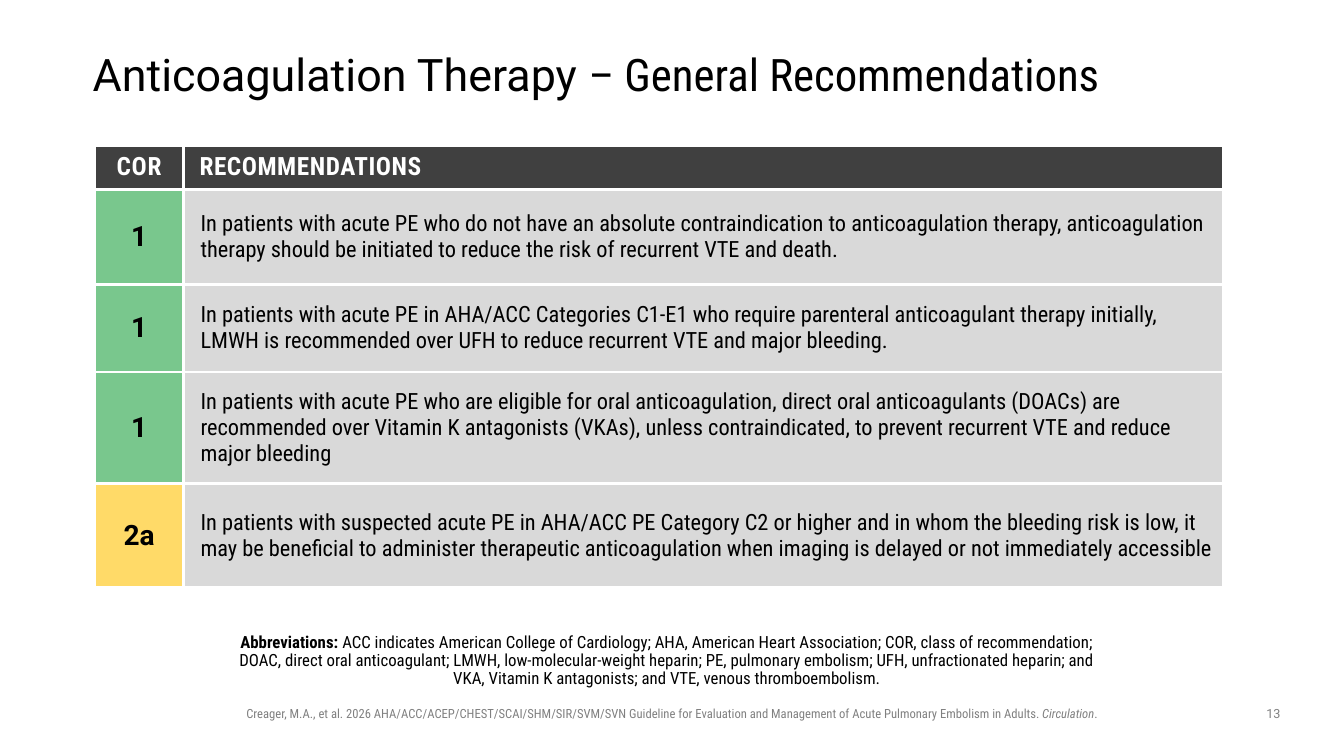
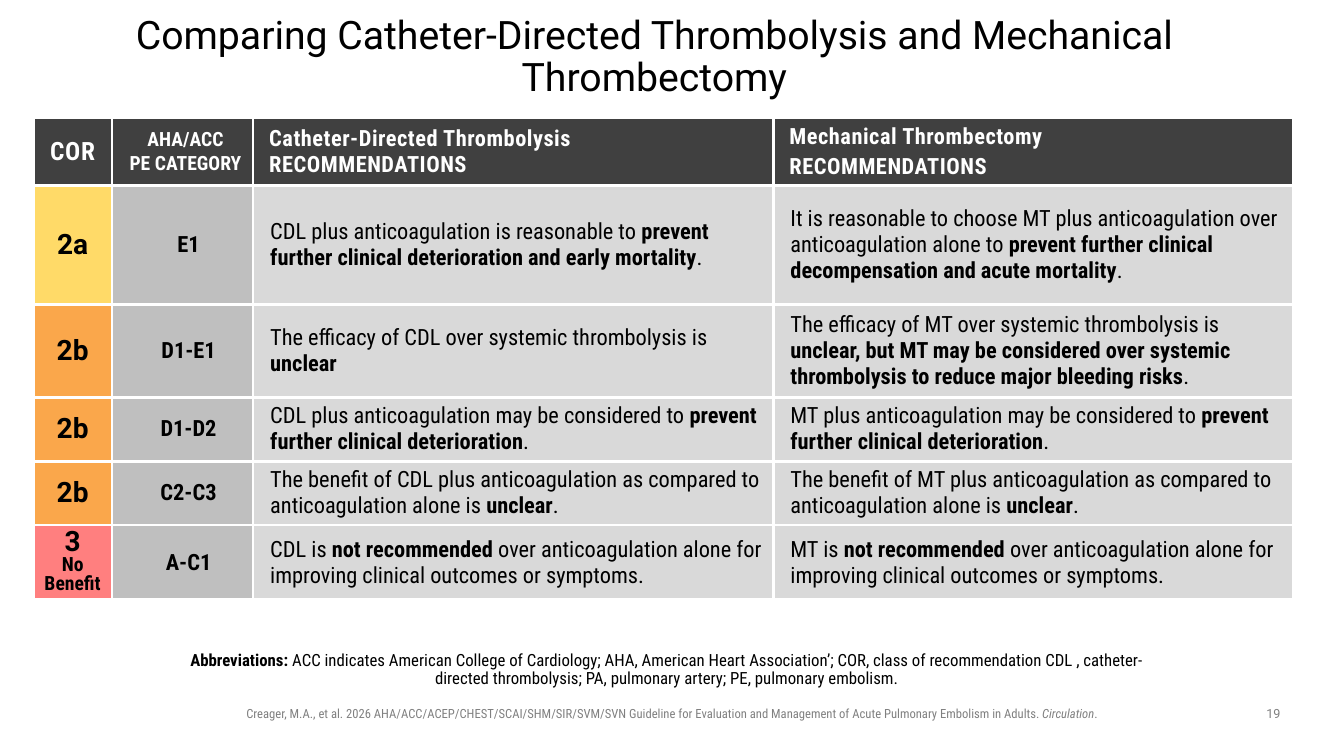
from dataclasses import dataclass

from lxml import etree
from pptx import Presentation
from pptx.dml.color import RGBColor
from pptx.enum.text import MSO_ANCHOR, PP_ALIGN
from pptx.oxml.ns import qn
from pptx.util import Inches, Pt

LEFT, CENTER = PP_ALIGN.LEFT, PP_ALIGN.CENTER
TOP, MIDDLE, BOTTOM = MSO_ANCHOR.TOP, MSO_ANCHOR.MIDDLE, MSO_ANCHOR.BOTTOM

BLACK = RGBColor(0x00, 0x00, 0x00)
WHITE = RGBColor(0xFF, 0xFF, 0xFF)
CHARCOAL = RGBColor(0x40, 0x40, 0x40)
GRAY = RGBColor(0x80, 0x80, 0x80)
SILVER = RGBColor(0xBF, 0xBF, 0xBF)
PALE = RGBColor(0xD9, 0xD9, 0xD9)
GREEN = RGBColor(0x79, 0xC7, 0x8D)
YELLOW = RGBColor(0xFF, 0xDA, 0x68)
ORANGE = RGBColor(0xFA, 0xA7, 0x4B)
RED = RGBColor(0xFF, 0x7F, 0x7F)
CLASS_FILLS = {"1": GREEN, "2a": YELLOW, "2b": ORANGE, "3": RED}

ROBOTO, CONDENSED = "Roboto", "Roboto Condensed"
BOLD = {"bold": True}
SLIDE_WIDTH, SLIDE_HEIGHT = Inches(13.33), Inches(7.5)
BORDER = Pt(2.25)
CELL_MARGIN = 0.05
HEADER_INDENT, BODY_INDENT = 0.06, 0.12

CITATION = (
    "Creager, M.A., et al. 2026 AHA/ACC/ACEP/CHEST/SCAI/SHM/SIR/SVM/SVN Guideline for "
    "Evaluation and Management of Acute Pulmonary Embolism in Adults. *Circulation*."
)


@dataclass
class Box:
    """Position and size as percentages of the slide."""
    left: float
    top: float
    width: float
    height: float

    def lengths(self):
        return (
            round(SLIDE_WIDTH * self.left / 100),
            round(SLIDE_HEIGHT * self.top / 100),
            round(SLIDE_WIDTH * self.width / 100),
            round(SLIDE_HEIGHT * self.height / 100),
        )


CITATION_BOX = Box(16.73, 92.67, 66.54, 3.33)
NUMBER_BOX = Box(93.17, 92.67, 3.15, 3.47)


def add_span(para, text, size, font, color, bold=False, italic=False, tracking=0):
    span = para.add_run()
    span.text = text
    span.font.size = Pt(size)
    span.font.name = font
    span.font.color.rgb = color
    span.font.bold = bold
    span.font.italic = italic
    if tracking:
        span.font._element.set("spc", str(round(tracking * 100)))


def write(frame, text, marked=BOLD, align=LEFT, indent=0, line_spacing=None, gap=0, **style):
    for index, content in enumerate(text.split("\n")):
        para = frame.add_paragraph() if index else frame.paragraphs[0]
        para.alignment = align
        if indent:
            para._p.get_or_add_pPr().set("marL", str(Inches(indent)))
        if line_spacing:
            para.line_spacing = line_spacing
        if index and gap:
            para.space_before = Pt(gap)
        for position, piece in enumerate(content.split("*")):
            piece_style = {**style, **marked} if position % 2 else style
            for number, line in enumerate(piece.split("\v")):
                if number:
                    para.add_line_break()
                if line:
                    add_span(para, line, **piece_style)


def add_text(page, box, text, margins=(0.1, 0.05, 0.1, 0.05), anchor=TOP, **style):
    frame = page.shapes.add_textbox(*box.lengths()).text_frame
    frame.word_wrap = True
    frame.vertical_anchor = anchor
    frame.margin_left, frame.margin_top, frame.margin_right, frame.margin_bottom = map(Inches, margins)
    write(frame, text, **style)


def paint_cell(cell, fill, margin=None):
    properties = cell._tc.get_or_add_tcPr()
    for side in ("lnL", "lnR", "lnT", "lnB"):
        line = etree.SubElement(properties, qn(f"a:{side}"), w=str(BORDER))
        solid = etree.SubElement(line, qn("a:solidFill"))
        etree.SubElement(solid, qn("a:srgbClr"), val=str(WHITE))
    cell.fill.solid()
    cell.fill.fore_color.rgb = fill
    cell.vertical_anchor = MIDDLE
    if margin is not None:
        cell.margin_left = cell.margin_right = Inches(margin)
        cell.margin_top = cell.margin_bottom = Inches(margin)


def fill_header(cell, text, size, align=LEFT, indent=HEADER_INDENT, tracking=0.4):
    paint_cell(cell, CHARCOAL)
    write(cell.text_frame, text, align=align, indent=indent, gap=2.8, size=size,
          font=CONDENSED, color=WHITE, bold=True, tracking=tracking)


def fill_class(cell, text):
    paint_cell(cell, CLASS_FILLS[text.split("\v")[0]], CELL_MARGIN)
    write(cell.text_frame, text, marked={"size": 14, "font": CONDENSED}, align=CENTER,
          line_spacing=0.8 if "\v" in text else None,
          size=20, font=ROBOTO, color=BLACK, bold=True)


def fill_category(cell, text):
    paint_cell(cell, SILVER, CELL_MARGIN)
    write(cell.text_frame, text, align=CENTER, indent=BODY_INDENT,
          size=16, font=CONDENSED, color=BLACK, bold=True)


def fill_recommendation(cell, text):
    paint_cell(cell, PALE, CELL_MARGIN)
    write(cell.text_frame, text, indent=BODY_INDENT, size=16, font=CONDENSED, color=BLACK)


def add_recommendations(page, box, column_shares, row_shares, headers, fillers, records):
    left, top, width, height = box.lengths()
    table = page.shapes.add_table(
        len(row_shares), len(column_shares), left, top, width, height).table
    table.first_row = table.horz_banding = False
    for column, share in zip(table.columns, column_shares):
        column.width = round(width * share / sum(column_shares))
    for row, share in zip(table.rows, row_shares):
        row.height = round(height * share / sum(row_shares))
    for cell, header in zip(table.rows[0].cells, headers):
        fill_header(cell, **header)
    for index, record in enumerate(records, start=1):
        for cell, fill_cell, text in zip(table.rows[index].cells, fillers, record):
            fill_cell(cell, text)


def add_page(deck, number, title, title_box, title_style, abbreviations, abbreviations_box):
    page = deck.slides.add_slide(deck.slide_layouts[6])
    add_text(page, CITATION_BOX, CITATION, marked={"italic": True}, align=CENTER,
             size=9, font=CONDENSED, color=GRAY)
    add_text(page, title_box, title, margins=(0, 0, 0, 0), anchor=MIDDLE,
             line_spacing=0.9, font=ROBOTO, color=BLACK, **title_style)
    add_text(page, abbreviations_box, "*Abbreviations: *" + abbreviations,
             margins=(0, 0.05, 0.1, 0.05), anchor=BOTTOM, align=CENTER, line_spacing=0.9,
             size=12, font=CONDENSED, color=BLACK)
    add_text(page, NUMBER_BOX, str(number), align=CENTER, size=9, font=ROBOTO, color=GRAY)
    return page


CLASS_HEADER = {"text": "COR", "size": 18, "align": CENTER, "indent": 0, "tracking": 0.5}


def add_anticoagulation_page(deck):
    page = add_page(
        deck, 13,
        "Anticoagulation Therapy *– General Recommendations",
        Box(6.9, 5.33, 86.27, 9.6),
        {"size": 32, "marked": {"font": CONDENSED}},
        "ACC indicates American College of Cardiology; AHA, American Heart Association; "
        "COR, class of recommendation; DOAC, direct oral anticoagulant; LMWH, "
        "low-molecular-weight heparin; PE, pulmonary embolism; UFH, unfractionated heparin; "
        "and VKA, Vitamin K antagonists; and VTE, venous thromboembolism.",
        Box(17.48, 85.6, 65.04, 6.13),
    )
    add_recommendations(
        page, Box(7.05, 19.2, 83.95, 58.53),
        column_shares=(88, 1031),
        row_shares=(44, 94, 87, 111, 103),
        headers=(CLASS_HEADER, {"text": "RECOMMENDATIONS", "size": 18}),
        fillers=(fill_class, fill_recommendation),
        records=(
            ("1", "In patients with acute PE who do not have an absolute contraindication to "
                  "anticoagulation therapy, anticoagulation therapy should be initiated to "
                  "reduce the risk of recurrent VTE and death."),
            ("1", "In patients with acute PE in AHA/ACC Categories C1-E1 who require parenteral "
                  "anticoagulant therapy initially, LMWH is recommended over UFH to reduce "
                  "recurrent VTE and major bleeding."),
            ("1", "In patients with acute PE who are eligible for oral anticoagulation, direct "
                  "oral anticoagulants (DOACs) are recommended over Vitamin K antagonists "
                  "(VKAs), unless contraindicated, to prevent recurrent VTE and reduce major "
                  "bleeding"),
            ("2a", "In patients with suspected acute PE in AHA/ACC PE Category C2 or higher and "
                   "in whom the bleeding risk is low, it may be beneficial to administer "
                   "therapeutic anticoagulation when imaging is delayed or not immediately "
                   "accessible"),
        ),
    )


def add_comparison_page(deck):
    page = add_page(
        deck, 19,
        "Comparing Catheter-Directed Thrombolysis and Mechanical Thrombectomy",
        Box(0, 2.8, 97.37, 9.6),
        {"size": 28, "align": CENTER},
        "ACC indicates American College of Cardiology; AHA, American Heart Association’; "
        "COR, class of recommendation CDL , catheter-directed thrombolysis; PA, pulmonary "
        "artery; PE, pulmonary embolism.",
        Box(14.1, 85.6, 71.79, 6.13),
    )
    add_recommendations(
        page, Box(2.48, 15.6, 93.77, 62.67),
        column_shares=(78, 140, 516, 516),
        row_shares=(65, 118, 92, 62, 62, 71),
        headers=(
            CLASS_HEADER,
            {"text": "AHA/ACC\vPE CATEGORY", "size": 14, "align": CENTER, "tracking": 0},
            {"text": "Catheter-Directed Thrombolysis RECOMMENDATIONS", "size": 16},
            {"text": "Mechanical Thrombectomy\nRECOMMENDATIONS", "size": 16},
        ),
        fillers=(fill_class, fill_category, fill_recommendation, fill_recommendation),
        records=(
            ("2a", "E1",
             "CDL plus anticoagulation is reasonable to *prevent further clinical "
             "deterioration and early mortality*.",
             "It is reasonable to choose MT plus anticoagulation over anticoagulation alone to "
             "*prevent further clinical decompensation and acute mortality*."),
            ("2b", "D1-E1",
             "The efficacy of CDL over systemic thrombolysis is *unclear",
             "The efficacy of MT over systemic thrombolysis is *unclear, but MT may be "
             "considered over systemic thrombolysis to reduce major bleeding risks*."),
            ("2b", "D1-D2", *(
                f"{therapy} plus anticoagulation may be considered to *prevent further "
                "clinical deterioration*." for therapy in ("CDL", "MT"))),
            ("2b", "C2-C3", *(
                f"The benefit of {therapy} plus anticoagulation as compared to "
                "anticoagulation alone is *unclear*." for therapy in ("CDL", "MT"))),
            ("3\v*No Benefit", "A-C1", *(
                f"{therapy} is *not recommended *over anticoagulation alone for improving "
                "clinical outcomes or symptoms." for therapy in ("CDL", "MT"))),
        ),
    )


def main():
    deck = Presentation()
    deck.slide_width, deck.slide_height = SLIDE_WIDTH, SLIDE_HEIGHT
    add_anticoagulation_page(deck)
    add_comparison_page(deck)
    deck.save("out.pptx")


if __name__ == "__main__":
    main()
